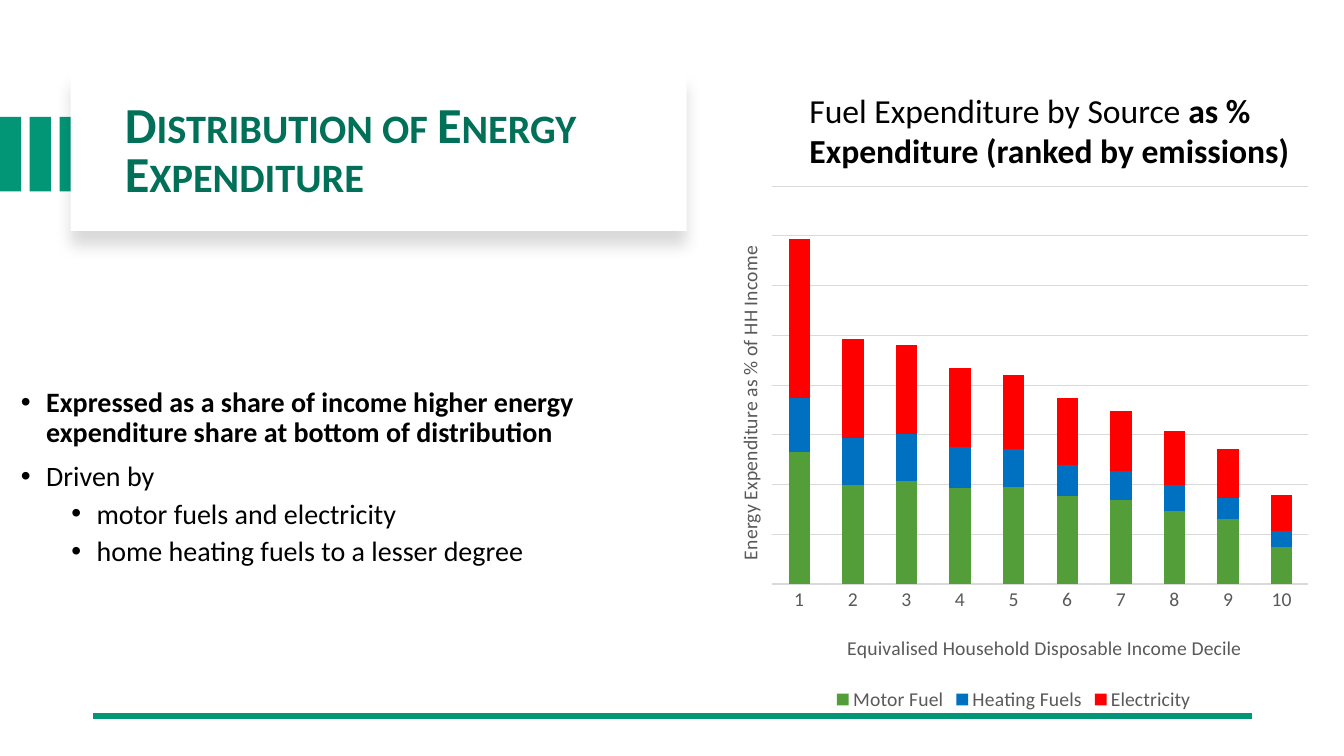
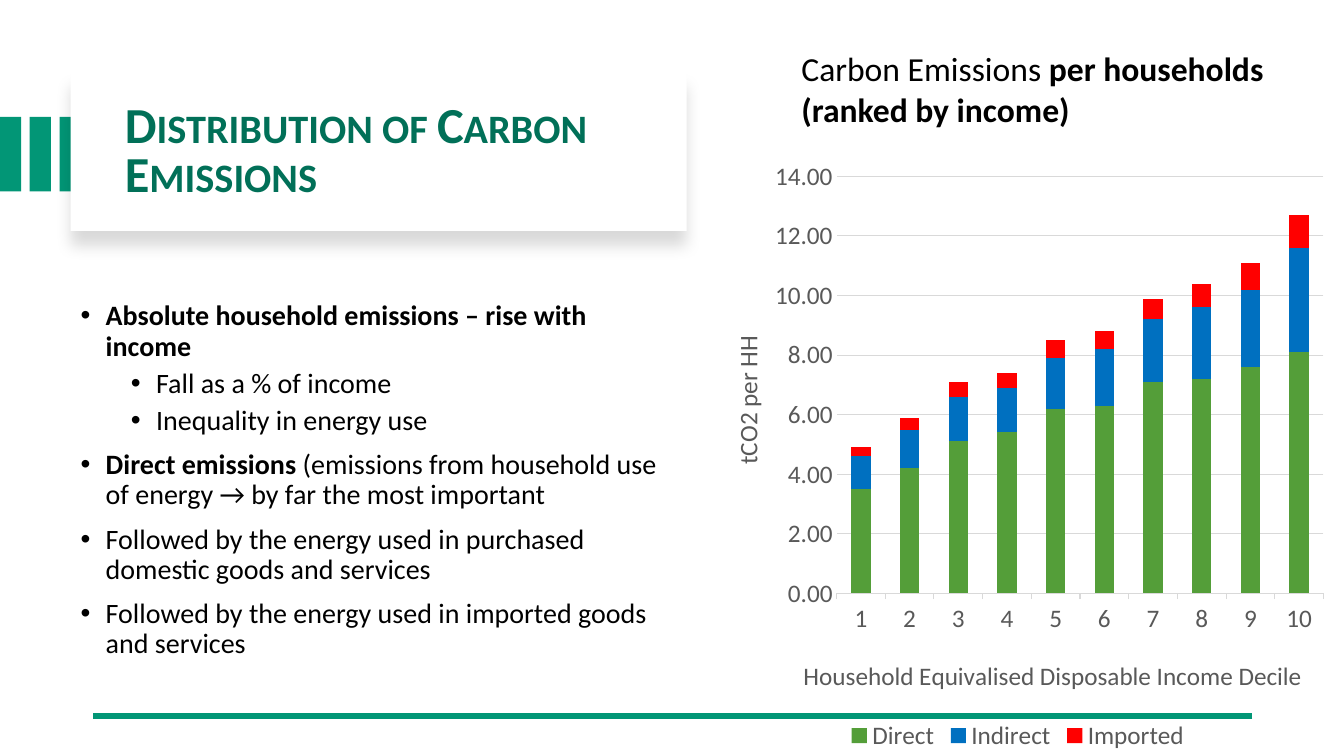
from lxml import etree
from pptx import Presentation
from pptx import util as u
from pptx.chart.data import CategoryChartData
from pptx.dml.color import RGBColor
from pptx.enum import chart as ch, shapes, text
from pptx.oxml import parse_xml
from pptx.oxml.ns import nsdecls, qn

FONT = "Calibri"
GREEN, TITLE = "029676", "017058"
BLACK, WHITE, GREY, GRID = "000000", "FFFFFF", "595959", "D9D9D9"
SERIES = ("549E39", "0070C0", "FF0000")


def rgb(code):
    return RGBColor.from_string(code)


def style(font, size, color):
    font.name, font.size = FONT, u.Pt(size)
    font.color.rgb = rgb(color)


def box(parent, x, y, w, h, fill):
    shape = parent.add_shape(shapes.MSO_SHAPE.RECTANGLE, *map(u.Inches, (x, y, w, h)))
    shape.shadow.inherit = False
    shape.fill.solid()
    shape.fill.fore_color.rgb = rgb(fill)
    shape.line.fill.background()
    return shape


def frame(slide, area, middle=True):
    tf = slide.shapes.add_textbox(*map(u.Inches, area)).text_frame
    tf.word_wrap = True
    if middle:
        tf.vertical_anchor = text.MSO_ANCHOR.MIDDLE
    return tf


def write(para, runs, size, color=BLACK):
    """Fill a paragraph with (text, bold) runs."""
    style(para.font, size, color)
    for words, bold in runs:
        run = para.add_run()
        run.text, run.font.bold = words, bold


# Shared parts: bars, title card, footer rule
def base(slide, title):
    group = slide.shapes.add_group_shape()
    for i in range(3):
        box(group.shapes, 0.295 * i, 1.16, 0.21, 0.74, GREEN)

    card = box(slide.shapes, 0.7, 0.72, 6.11, 1.57, WHITE)
    fx = card._element.spPr.find(qn("a:effectLst"))
    fx.append(parse_xml(
        f'<a:outerShdw {nsdecls("a")} blurRad="{u.Pt(11)}" dist="{u.Pt(10)}" '
        'dir="5400000" algn="t" rotWithShape="0"><a:srgbClr val="000000">'
        '<a:alpha val="15000"/></a:srgbClr></a:outerShdw>'))

    para = frame(slide, (1.14, 0.96, 5.79, 1.13)).paragraphs[0]
    para.line_spacing = 0.8
    write(para, [(title, True)], 36, TITLE)
    para.runs[0]._r.get_or_add_rPr().set("cap", "small")

    rule = slide.shapes.add_connector(
        shapes.MSO_CONNECTOR.STRAIGHT, *map(u.Inches, (12.42, 7.1, 0.92, 7.1)))
    rule.line.color.rgb, rule.line.width = rgb(GREEN), u.Pt(4.5)
    etree.SubElement(rule._element.spPr, qn("a:effectLst"))


def bullets(slide, area, items):
    """Each item is (level, runs)."""
    tf = frame(slide, area)
    for i, (level, runs) in enumerate(items):
        para = tf.add_paragraph() if i else tf.paragraphs[0]
        para.level = level
        para.line_spacing = 0.9
        para.space_before = u.Pt(5 if level else 10)
        props = para._p.get_or_add_pPr()
        props.set("marL", str(u.Inches(0.25 + 0.5 * level)))
        props.set("indent", str(-u.Inches(0.25)))
        etree.SubElement(props, qn("a:buFont")).set("typeface", "Arial")
        etree.SubElement(props, qn("a:buChar")).set("char", "•")
        write(para, runs, 20)


def heading(slide, x, y, runs):
    write(frame(slide, (x, y, 5.4, 0.91), False).paragraphs[0], runs, 24)


# Chart helpers
def place(node, index, **spots):
    """Set a manual layout, in fractions of the chart."""
    old = node.find(qn("c:layout"))
    if old is not None:
        node.remove(old)
    parts = [("layoutTarget", "inner")] if "w" in spots else []
    parts += [("xMode", "edge"), ("yMode", "edge"), *spots.items()]
    inner = "".join(f'<c:{tag} val="{val}"/>' for tag, val in parts)
    node.insert(index, parse_xml(
        f'<c:layout {nsdecls("c")}><c:manualLayout>{inner}</c:manualLayout></c:layout>'))


def label(axis, words, size, spot, turn=False):
    title = axis.axis_title
    para = title.text_frame.paragraphs[0]
    write(para, [(words, False)], size, GREY)
    if turn:
        body = title.text_frame._txBody.find(qn("a:bodyPr"))
        body.set("rot", "-5400000")
        body.set("vert", "horz")
    place(title._element, 1, x=spot[0], y=spot[1])


def stack(slide, area, size, rows, plot, names, spots, top, step, scale):
    data = CategoryChartData(number_format="0.00")
    data.categories = [str(n) for n in range(1, 11)]
    for name, vals in rows:
        data.add_series(name, vals)
    chart = slide.shapes.add_chart(
        ch.XL_CHART_TYPE.COLUMN_STACKED, *map(u.Inches, area), data).chart
    style(chart.font, size, BLACK)
    chart.has_title = False
    chart.has_legend = True
    chart.legend.position = ch.XL_LEGEND_POSITION.BOTTOM
    chart.legend.include_in_layout = False
    style(chart.legend.font, size, GREY)

    bars = chart.plots[0]
    bars.gap_width, bars.overlap, bars.vary_by_categories = 150, 100, False
    for item, color in zip(bars.series, SERIES):
        item.format.fill.solid()
        item.format.fill.fore_color.rgb = rgb(color)

    cat, val = chart.category_axis, chart.value_axis
    for axis, words, spot in zip((cat, val), names, spots):
        style(axis.tick_labels.font, size, GREY)
        axis.major_tick_mark = axis.minor_tick_mark = ch.XL_TICK_MARK.NONE
        label(axis, words, size, spot, axis is val)
    if scale:
        cat.major_tick_mark = ch.XL_TICK_MARK.OUTSIDE
    val.visible = scale
    val.minimum_scale, val.maximum_scale, val.major_unit = 0, top, step
    val.tick_labels.number_format = "0.00"
    val.tick_labels.number_format_is_linked = False
    val.format.line.fill.background()
    val.has_major_gridlines = True
    for line in (cat.format.line, val.major_gridlines.format.line):
        line.color.rgb, line.width = rgb(GRID), u.Pt(0.75)
    place(chart._chartSpace.chart.plotArea, 0, **dict(zip("xywh", plot)))


def energy(slide):
    base(slide, "Distribution of Energy Expenditure")
    bullets(slide, (0.11, 2.73, 5.87, 4.02), [
        (0, [("Expressed as a share of income higher energy expenditure share "
              "at bottom of distribution", True)]),
        (0, [("Driven by", False)]),
        (1, [("motor fuels and electricity", False)]),
        (1, [("home heating fuels to a lesser degree", False)]),
    ])
    heading(slide, 7.93, 0.84, [("Fuel Expenditure by Source ", False),
                                ("as % Expenditure (ranked by emissions)", True)])
    stack(
        slide, (7.01, 1.75, 6.09, 5.35), 14,
        [("Motor Fuel", (83, 62, 65, 60, 61, 55, 53, 46, 41, 23)),
         ("Heating Fuels", (34, 30, 29, 26, 24, 20, 18, 16, 13, 10)),
         ("Electricity", (100, 62, 56, 50, 46, 42, 38, 34, 31, 23))],
        plot=(0.107, 0.018, 0.873, 0.738),
        names=("Equivalised Household Disposable Income Decile",
               "Energy Expenditure as % of HH Income"),
        spots=((0.223, 0.842), (0.042, 0.122)), top=250, step=31.25, scale=False)


def carbon(slide):
    base(slide, "Distribution of Carbon Emissions")
    bullets(slide, (0.7, 2.76, 6.11, 4.02), [
        (0, [("Absolute household emissions – rise with income", True)]),
        (1, [("Fall as a % of income", False)]),
        (1, [("Inequality in energy use", False)]),
        (0, [("Direct emissions ", True),
             ("(emissions from household use of energy → by far the most important",
              False)]),
        (0, [("Followed by the energy used in purchased domestic goods and services",
              False)]),
        (0, [("Followed by the energy used in imported goods and services", False)]),
    ])
    heading(slide, 7.85, 0.43, [("Carbon Emissions ", False),
                                ("per households (ranked by income)", True)])
    stack(
        slide, (6.93, 1.48, 6.33, 6.02), 18,
        [("Direct", (3.5, 4.2, 5.1, 5.4, 6.2, 6.3, 7.1, 7.2, 7.6, 8.1)),
         ("Indirect", (1.1, 1.3, 1.5, 1.5, 1.7, 1.9, 2.1, 2.4, 2.6, 3.5)),
         ("Imported", (0.3, 0.4, 0.5, 0.5, 0.6, 0.6, 0.7, 0.8, 0.9, 1.1))],
        plot=(0.216, 0.045, 0.763, 0.687),
        names=("Household Equivalised Disposable Income Decile", "tCO2 per HH"),
        spots=((0.157, 0.831), (0.042, 0.3)), top=14, step=2, scale=True)


def main():
    deck = Presentation()
    deck.slide_width, deck.slide_height = u.Inches(13.33), u.Inches(7.5)
    for build in (energy, carbon):
        build(deck.slides.add_slide(deck.slide_layouts[6]))
    deck.save("out.pptx")


if __name__ == "__main__":
    main()
